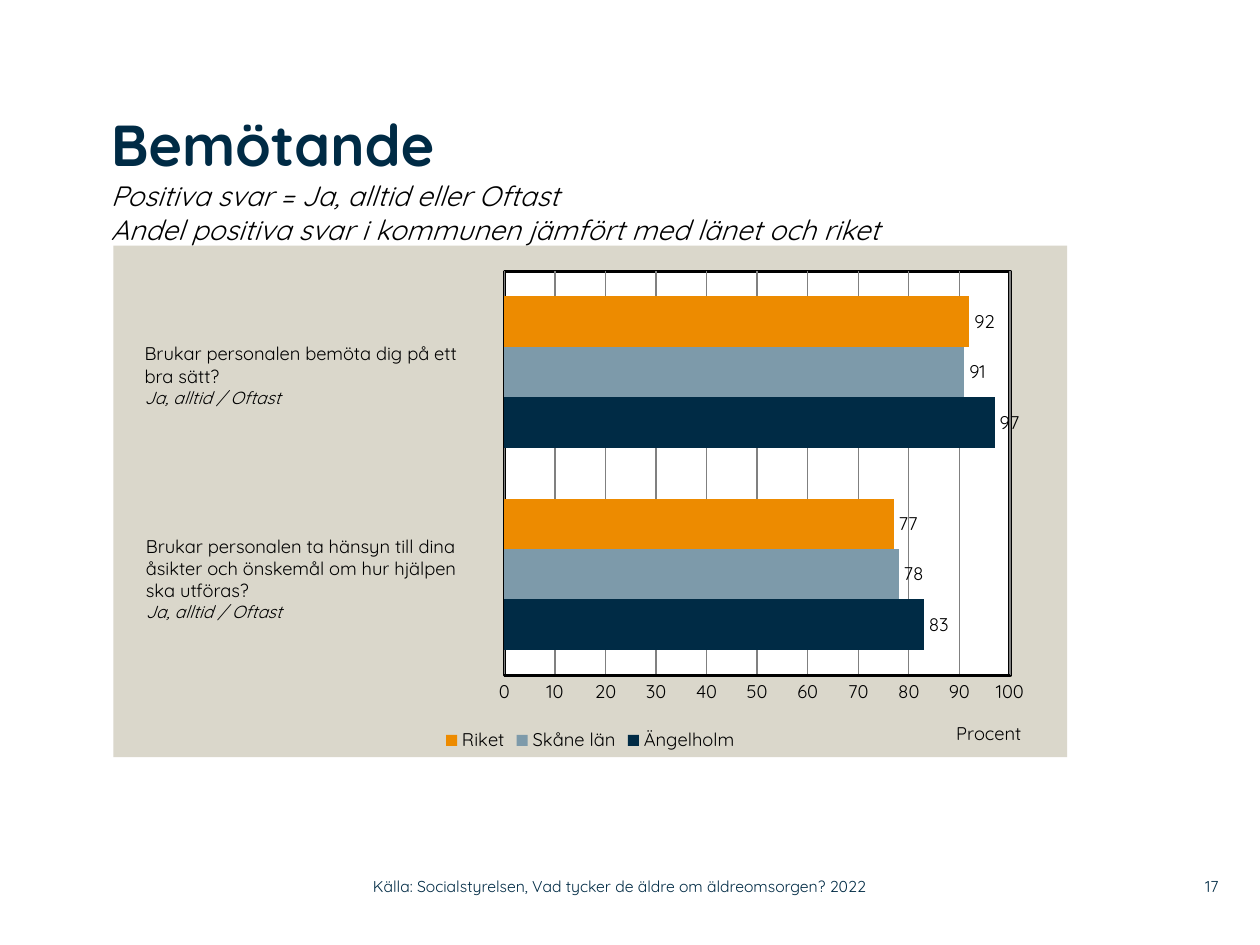
from lxml import etree
from pptx import Presentation
from pptx.chart.data import CategoryChartData
from pptx.dml.color import RGBColor
from pptx.enum import chart as ch, text as tx
from pptx.oxml.ns import qn
from pptx.util import Inches, Pt

# Content
TITLE = "Bemötande"
LEAD = ["Positiva svar = Ja, alltid eller Oftast",
        "Andel positiva svar i kommunen jämfört med länet och riket"]
CATS = ["1", "2"]
SERIES = [("Ängelholm", (83, 97), "navy"),
          ("Skåne län", (78, 91), "blue"),
          ("Riket", (77, 92), "gold")]
ANSWER = "Ja, alltid / Oftast"
ASKS = [((1.05, 2.67, 2.97, 0.81),
         ["Brukar personalen bemöta dig på ett", "bra sätt?"]),
        ((1.06, 4.2, 3.01, 0.98),
         ["Brukar personalen ta hänsyn till dina",
          "åsikter och önskemål om hur hjälpen", "ska utföras?"])]
FOOT = [((2.96, 6.89, 4.43, 0.29), tx.PP_ALIGN.LEFT,
         "Källa: Socialstyrelsen, Vad tycker de äldre om äldreomsorgen? 2022"),
        ((9.2, 6.89, 0.47, 0.29), tx.PP_ALIGN.RIGHT, "17")]

THEME = {
    "face": "Quicksand",
    "navy": "002B45", "blue": "7D9AAA", "gold": "ED8B00",
    "sand": "DAD7CB", "white": "FFFFFF", "black": "000000", "grid": "808080",
    "title": 33, "lead": 16, "body": 10.5, "note": 10, "foot": 9,
}


def tint(name):
    return RGBColor.from_string(THEME[name])


def style(font, size, color="black", bold=False, ital=False):
    font.name = THEME["face"]
    font.size = Pt(THEME[size])
    font.color.rgb = tint(color)
    font.bold, font.italic = bold, ital


def place(box):
    return [Inches(v) for v in box]


def no_inset(frame):
    frame.margin_left = frame.margin_right = 0
    frame.margin_top = frame.margin_bottom = 0


def add_text(slide, box, lines):
    frame = slide.shapes.add_textbox(*place(box)).text_frame
    frame.word_wrap = True
    frame.text = "\n".join(lines)
    return frame


def add_fill(node, color):
    fill = etree.SubElement(node, qn("a:solidFill"))
    etree.SubElement(fill, qn("a:srgbClr")).set("val", THEME[color])


def paint(prior, fill, line=None):
    """Add fill and outline to a chart part, after its child prior."""
    props = etree.Element(qn("c:spPr"))
    prior.addnext(props)
    add_fill(props, fill)
    edge = etree.SubElement(props, qn("a:ln"))
    if line:
        edge.set("w", str(int(Pt(2))))
        add_fill(edge, line)
    else:
        etree.SubElement(edge, qn("a:noFill"))


def layout(node, spot, **spots):
    """Give a chart part a manual layout as its child number spot."""
    for old in node.findall(qn("c:layout")):
        node.remove(old)
    lay = etree.Element(qn("c:layout"))
    man = etree.SubElement(lay, qn("c:manualLayout"))
    for key, val in spots.items():
        etree.SubElement(man, qn("c:" + key)).set("val", str(val))
    node.insert(spot, lay)


def add_bars(slide):
    data = CategoryChartData()
    data.categories = CATS
    for name, vals, _ in SERIES:
        data.add_series(name, vals)
    chart = slide.shapes.add_chart(ch.XL_CHART_TYPE.BAR_CLUSTERED,
                                   *place((0.9, 1.95, 7.57, 4.06)), data).chart
    style(chart.font, "body")
    chart.has_title = False
    chart.has_legend = True
    chart.legend.position = ch.XL_LEGEND_POSITION.BOTTOM
    chart.legend.include_in_layout = False

    # Bars
    plot = chart.plots[0]
    plot.gap_width, plot.overlap, plot.vary_by_categories = 100, 0, False
    for bar, (_, _, color) in zip(plot.series, SERIES):
        bar.format.fill.solid()
        bar.format.fill.fore_color.rgb = tint(color)
        tags = bar.data_labels
        tags.show_value = True
        tags.position = ch.XL_LABEL_POSITION.OUTSIDE_END
        style(tags.font, "body")

    # Axes
    chart.category_axis.visible = False
    axis = chart.value_axis
    axis.minimum_scale, axis.maximum_scale, axis.major_unit = 0, 100, 10
    axis.major_tick_mark = axis.minor_tick_mark = ch.XL_TICK_MARK.NONE
    axis.format.line.color.rgb = tint("black")
    axis.format.line.width = Pt(2)
    axis.has_major_gridlines = True
    grid = axis.major_gridlines.format.line
    grid.color.rgb, grid.width = tint("grid"), Pt(0.75)
    style(axis.tick_labels.font, "body")
    head = axis.axis_title
    head.text_frame.text = "Procent"
    style(head.text_frame.paragraphs[0].font, "body")
    layout(head._element, 1, xMode="edge", yMode="edge", x=0.88, y=0.92)

    # Plot area and backdrop
    root = chart.element
    body = root.find(qn("c:chart"))
    area = body.find(qn("c:plotArea"))
    layout(area, 0, layoutTarget="inner", xMode="edge", yMode="edge",
           x=0.41, y=0.05, w=0.53, h=0.79)
    paint(area[-1], "white", "black")
    paint(body, "sand")


def main():
    deck = Presentation()
    deck.slide_width, deck.slide_height = Inches(10), Inches(7.5)
    slide = deck.slides.add_slide(deck.slide_layouts[5])

    # Title
    head = slide.shapes.title
    head.left, head.top, head.width, head.height = place((0.88, 0.82, 7.84, 1.13))
    frame = head.text_frame
    no_inset(frame)
    frame.auto_size = tx.MSO_AUTO_SIZE.NONE
    frame.vertical_anchor = tx.MSO_ANCHOR.BOTTOM
    para = frame.paragraphs[0]
    para.alignment = tx.PP_ALIGN.LEFT
    run = para.add_run()
    run.text = TITLE
    style(run.font, "title", "navy", bold=True)
    for line in LEAD:
        para.add_line_break()
        run = para.add_run()
        run.text = line
        style(run.font, "lead", ital=True)

    add_bars(slide)

    # Questions
    for box, lines in ASKS:
        frame = add_text(slide, box, lines + [ANSWER])
        frame.auto_size = tx.MSO_AUTO_SIZE.SHAPE_TO_FIT_TEXT
        *body, note = frame.paragraphs
        for para in body:
            style(para.font, "body")
        style(note.font, "note", ital=True)

    # Footer
    for box, align, words in FOOT:
        frame = add_text(slide, box, [words])
        no_inset(frame)
        frame.vertical_anchor = tx.MSO_ANCHOR.MIDDLE
        para = frame.paragraphs[0]
        para.alignment = align
        style(para.font, "foot", "navy")

    deck.save("out.pptx")


if __name__ == "__main__":
    main()
